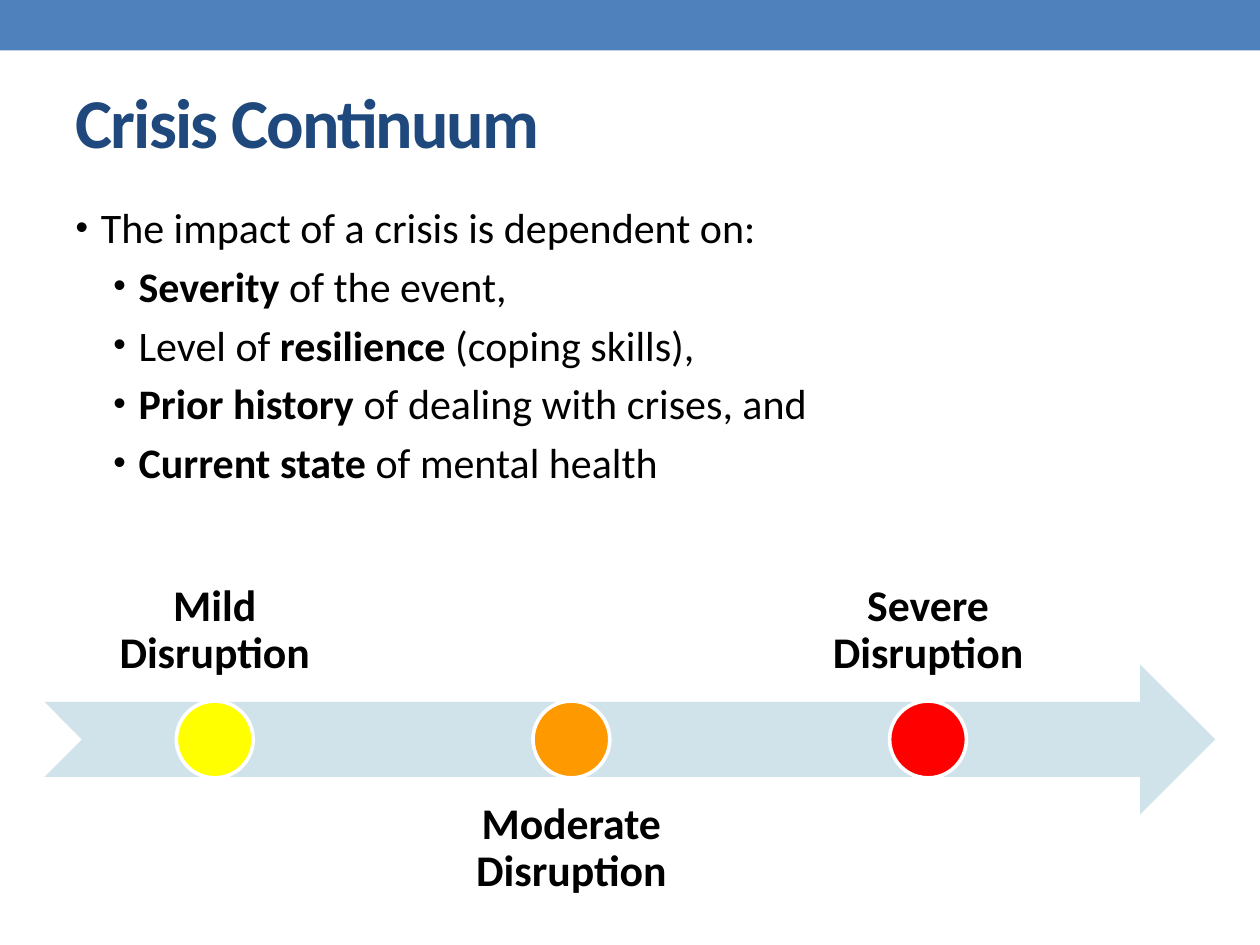
import dataclasses

import lxml.etree
import pptx
import pptx.dml.color
import pptx.enum.shapes
import pptx.enum.text
import pptx.oxml.ns
import pptx.util

Pt = pptx.util.Pt
SHAPE = pptx.enum.shapes.MSO_SHAPE
ANCHOR = pptx.enum.text.MSO_ANCHOR
ALIGN = pptx.enum.text.PP_ALIGN


@dataclasses.dataclass(frozen=True)
class Theme:
    font: str = "Calibri"
    title_size: float = 40
    body_size: float = 24
    label_size: float = 25
    title: str = "1F497D"
    text: str = "000000"
    band: str = "4F81BD"
    arrow: str = "D0E3EA"
    outline: str = "FFFFFF"
    mild: str = "FFFF00"
    moderate: str = "FF9900"
    severe: str = "FF0000"


class SlideBuilder:
    def __init__(self, slide, theme):
        self.slide = slide
        self.theme = theme

    def place(self, shape, left, top, width, height):
        shape.left, shape.top = Pt(left), Pt(top)
        shape.width, shape.height = Pt(width), Pt(height)

    def run(self, paragraph, text, size, color, bold):
        run = paragraph.add_run()
        run.text = text
        run.font.name = self.theme.font
        run.font.size = Pt(size)
        run.font.bold = bold
        run.font.color.rgb = pptx.dml.color.RGBColor.from_string(color)
        return run

    def title(self, text, *box):
        heading = self.slide.shapes.title
        self.place(heading, *box)
        heading.text_frame.vertical_anchor = ANCHOR.MIDDLE
        paragraph = heading.text_frame.paragraphs[0]
        paragraph.alignment = ALIGN.LEFT
        run = self.run(paragraph, text, self.theme.title_size, self.theme.title, True)
        run.font._element.set("spc", "-100")

    def bullet(self, paragraph, margin, hanging):
        properties = paragraph._p.get_or_add_pPr()
        properties.set("marL", str(Pt(margin)))
        properties.set("indent", str(-Pt(hanging)))
        for tag, name, value in (
            ("a:buSzPct", "val", "85000"),
            ("a:buFont", "typeface", "Arial"),
            ("a:buChar", "char", "•"),
        ):
            mark = lxml.etree.SubElement(properties, pptx.oxml.ns.qn(tag))
            mark.set(name, value)

    def bullets(self, items, *box):
        """Each item is (level, [(text, bold), ...])."""
        body = self.slide.placeholders[1]
        self.place(body, *box)
        frame = body.text_frame
        for index, (level, pieces) in enumerate(items):
            paragraph = frame.add_paragraph() if index else frame.paragraphs[0]
            paragraph.level = level
            self.bullet(paragraph, 14.4 + 21.6 * level, 14.4)
            for text, bold in pieces:
                self.run(paragraph, text, self.theme.body_size, self.theme.text, bold)

    def shape(self, preset, fill, *box, outline=None):
        shape = self.slide.shapes.add_shape(preset, *(Pt(length) for length in box))
        shape.shadow.inherit = False
        shape.fill.solid()
        shape.fill.fore_color.rgb = pptx.dml.color.RGBColor.from_string(fill)
        if outline:
            shape.line.color.rgb = pptx.dml.color.RGBColor.from_string(outline)
            shape.line.width = Pt(2.08)
        else:
            shape.line.fill.background()

    def label(self, text, anchor, *box):
        caption = self.slide.shapes.add_textbox(*(Pt(length) for length in box))
        frame = caption.text_frame
        frame.word_wrap = True
        frame.vertical_anchor = anchor
        frame.margin_left = frame.margin_right = Pt(13.7)
        frame.margin_top = frame.margin_bottom = Pt(13.7)
        paragraph = frame.paragraphs[0]
        paragraph.alignment = ALIGN.CENTER
        paragraph.line_spacing = 0.9
        self.run(paragraph, text, self.theme.label_size, self.theme.text, True)


def main():
    deck = pptx.Presentation()
    deck.slide_width, deck.slide_height = Pt(720), Pt(540)
    theme = Theme()
    builder = SlideBuilder(deck.slides.add_slide(deck.slide_layouts[1]), theme)

    # Top band and heading
    builder.shape(SHAPE.RECTANGLE, theme.band, 0, 0, 720, 28.8)
    builder.title("Crisis Continuum", 36, 30.2, 648, 77.8)

    # Factors that decide the impact
    factors = [
        (0, [("The impact of a crisis is dependent on:", False)]),
        (1, [("Severity", True), (" of the event,", False)]),
        (1, [("Level of ", False), ("resilience", True), (" (coping skills),", False)]),
        (1, [("Prior history ", True), ("of dealing with crises, and", False)]),
        (1, [("Current state ", True), ("of mental health", False)]),
    ]
    builder.bullets(factors, 36, 111.6, 664, 399)

    # Continuum arrow
    arrow_top, arrow_height = 379.7, 85.7
    builder.shape(SHAPE.NOTCHED_RIGHT_ARROW, theme.arrow, 25.4, arrow_top, 669, arrow_height)

    # Stages: evenly spaced dots, labels alternately above and below
    stages = [
        ("Mild Disruption", theme.mild, 172),
        ("Moderate Disruption", theme.moderate, 194),
        ("Severe Disruption", theme.severe, 194),
    ]
    first_center, pitch, dot = 122.7, 203.8, 43.9
    dot_top = arrow_top + (arrow_height - dot) / 2
    for index, (name, color, width) in enumerate(stages):
        center = first_center + index * pitch
        above = index % 2 == 0
        label_top = 315.4 if above else 444.2
        anchor = ANCHOR.BOTTOM if above else ANCHOR.TOP
        builder.label(name, anchor, center - width / 2, label_top, width, arrow_height)
        builder.shape(SHAPE.OVAL, color, center - dot / 2, dot_top, dot, dot,
                      outline=theme.outline)

    deck.save("out.pptx")


if __name__ == "__main__":
    main()
